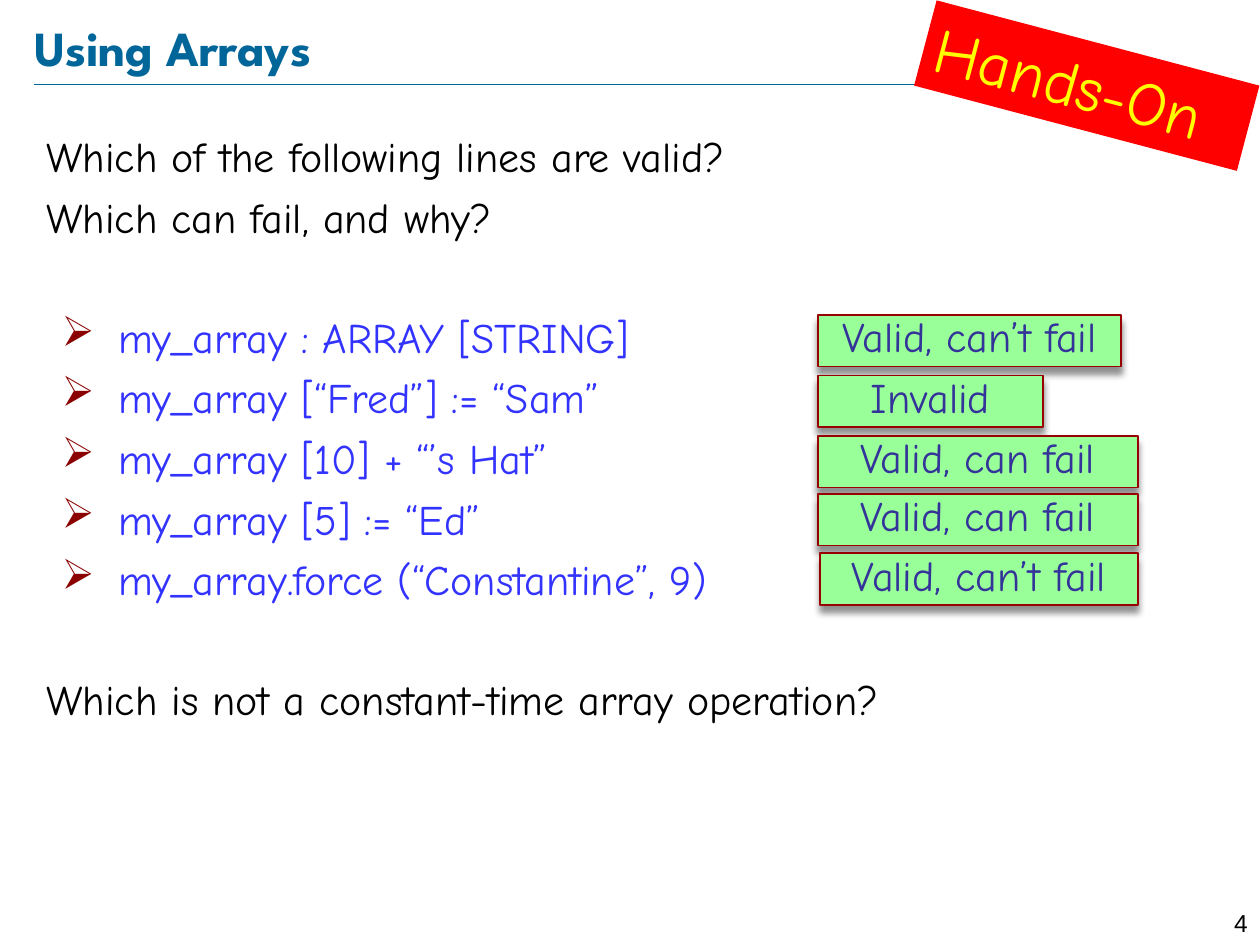
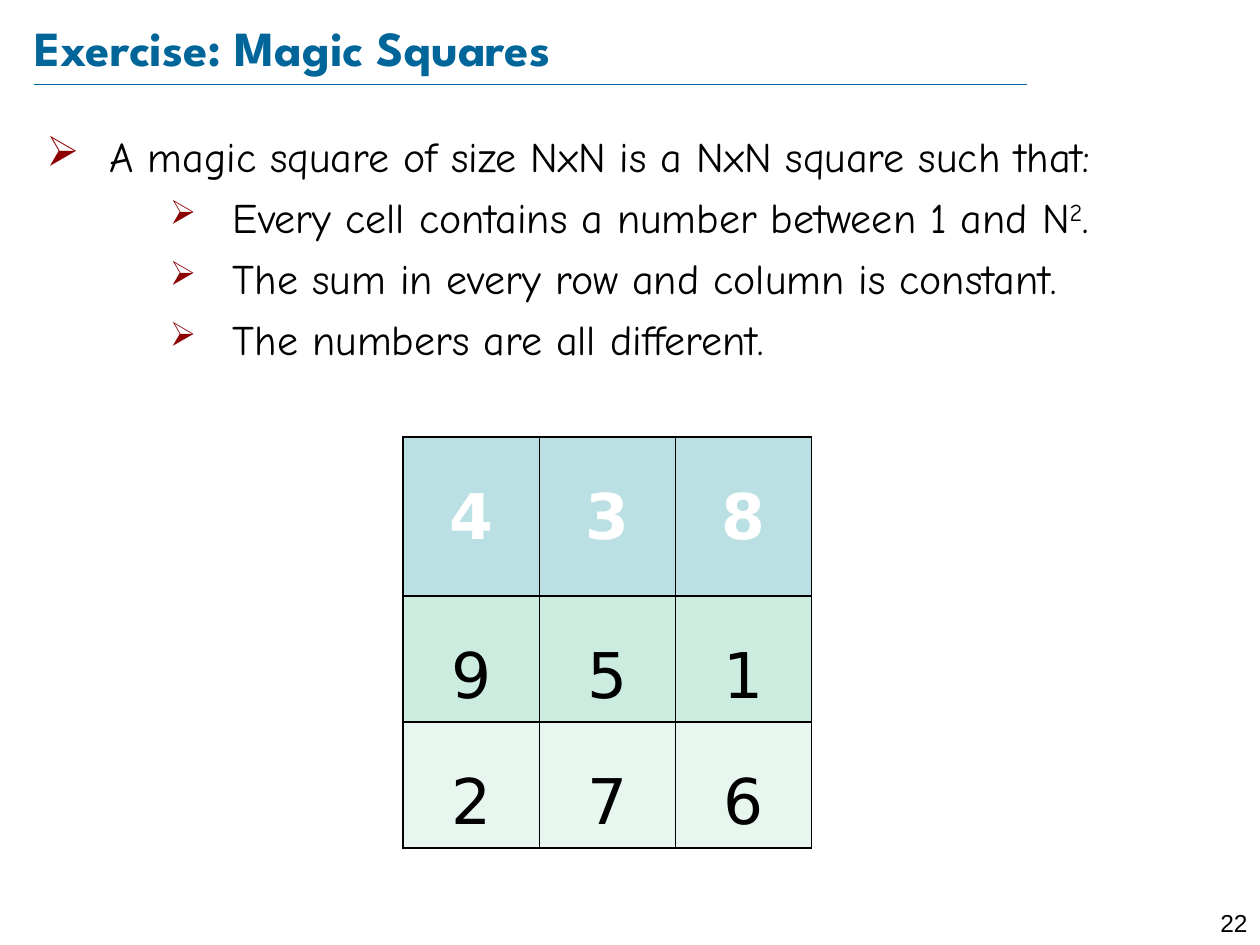
"""Builds two lecture slides on arrays: a validity quiz and the magic square exercise."""
from lxml import etree
from pptx import Presentation
from pptx.dml.color import RGBColor
from pptx.enum.shapes import MSO_CONNECTOR, MSO_SHAPE
from pptx.enum.text import MSO_ANCHOR, PP_ALIGN
from pptx.oxml.ns import qn
from pptx.util import Inches, Pt

STRAIGHT = MSO_CONNECTOR.STRAIGHT
RECTANGLE = MSO_SHAPE.RECTANGLE
MIDDLE, TOP = MSO_ANCHOR.MIDDLE, MSO_ANCHOR.TOP
LEFT, CENTER, RIGHT = PP_ALIGN.LEFT, PP_ALIGN.CENTER, PP_ALIGN.RIGHT

COLORS = {
    "title": "006699", "text": "000000", "code": "3333FF", "bullet": "8B0000",
    "sticker": "FF0000", "sticker_text": "FFFF00",
    "answer": "99FF99", "answer_line": "990000", "answer_text": "333399",
    "header_text": "FFFFFF", "header": "BBE0E3", "odd": "CBECDE", "even": "E7F6EF",
}
TITLE_FONT, BODY_FONT, NUMBER_FONT, GRID_FONT = (
    "League Spartan", "Comic Neue", "Arial", "DejaVu Sans")
LINE_GAP, SECTION_GAP = 5.9, 39.4

QUIZ_LINES = [
    "my_array : ARRAY [STRING]",
    "my_array [“Fred”] := “Sam”",
    "my_array [10] + “’s Hat”",
    "my_array [5] := “Ed”",
    "my_array.force (“Constantine”, 9)",
]
ANSWERS = [
    ("Valid, can’t fail", 6.49, 2.5, 2.41),
    ("Invalid", 6.49, 2.98, 1.79),
    ("Valid, can fail", 6.49, 3.46, 2.54),
    ("Valid, can fail", 6.49, 3.92, 2.54),
    ("Valid, can’t fail", 6.51, 4.39, 2.52),
]
MAGIC_RULES = [
    ["Every cell contains a number between 1 and N", "2", "."],
    ["The sum in every row and column is constant."],
    ["The numbers are all different."],
]
MAGIC_SQUARE = [[4, 3, 8], [9, 5, 1], [2, 7, 6]]


def color(name):
    """Return the named colour."""
    return RGBColor.from_string(COLORS[name])


def add_child(parent, tag, **attributes):
    """Append a DrawingML element and return it."""
    return etree.SubElement(parent, qn(f"a:{tag}"), attributes)


def add_solid(parent, name):
    """Append a solid fill in the named colour."""
    add_child(add_child(parent, "solidFill"), "srgbClr", val=COLORS[name])


def style_runs(para, font, size, color_name, bold=False):
    """Format every run of a paragraph."""
    for span in para.runs:
        span.font.name = font
        span.font.size = Pt(size)
        span.font.bold = bold
        span.font.color.rgb = color(color_name)


def set_margins(frame, left, top, right, bottom):
    """Set the four insets of a text frame or a table cell in inches."""
    frame.margin_left, frame.margin_top = Inches(left), Inches(top)
    frame.margin_right, frame.margin_bottom = Inches(right), Inches(bottom)


def add_text_box(page, left, top, width, height, margins=(0.1, 0.05, 0.1, 0.05), anchor=TOP):
    """Add a wrapping text box and return its text frame."""
    box = page.shapes.add_textbox(Inches(left), Inches(top), Inches(width), Inches(height))
    frame = box.text_frame
    frame.word_wrap = True
    frame.vertical_anchor = anchor
    set_margins(frame, *margins)
    return frame


def add_page(deck, title, number):
    """Add a blank page with title, rule and page number."""
    page = deck.slides.add_slide(deck.slide_layouts[6])
    rule = page.shapes.add_connector(
        STRAIGHT, Inches(0.27), Inches(0.67), Inches(8.15), Inches(0.67))
    rule.line.color.rgb = color("title")
    rule.line.width = Pt(0.25)
    add_child(rule._element.spPr, "effectLst")

    number_frame = add_text_box(page, 9.45, 7.16, 0.55, 0.24)
    number_frame.text = str(number)
    number_frame.paragraphs[0].alignment = RIGHT
    style_runs(number_frame.paragraphs[0], NUMBER_FONT, 14, "text")

    title_frame = add_text_box(page, 0.27, 0.13, 8.69, 0.48, (0, 0, 0, 0), MIDDLE)
    title_frame.text = title
    style_runs(title_frame.paragraphs[0], TITLE_FONT, 28, "title", True)
    return page


def add_body(page):
    """Add the main text area and return its text frame."""
    return add_text_box(page, 0.27, 0.96, 9.4, 6.17, (0.1, 0.08, 0.1, 0.05))


def add_bullet(para, indent, hanging, percent):
    """Give a paragraph an arrow bullet with a hanging indent."""
    properties = para._p.get_or_add_pPr()
    properties.set("marL", str(Inches(indent)))
    properties.set("indent", str(-Inches(hanging)))
    bullet_color = add_child(properties, "buClr")
    add_child(bullet_color, "srgbClr", val=COLORS["bullet"])
    add_child(properties, "buSzPct", val=str(percent * 1000))
    add_child(properties, "buChar", char="➢")


def add_line(frame, text, color_name="text", gap=LINE_GAP, bullet=None):
    """Add one body paragraph, with an optional (indent, hanging, percent) bullet."""
    is_first = not frame.text
    para = frame.paragraphs[0] if is_first else frame.add_paragraph()
    para.text = text
    if bullet:
        add_bullet(para, *bullet)
    if not is_first:
        para.space_before = Pt(gap)
    style_runs(para, BODY_FONT, 24, color_name)
    return para


def add_superscript(para, exponent, rest):
    """Append a raised exponent and the text after it."""
    for text in (exponent, rest):
        para.add_run().text = text
    style_runs(para, BODY_FONT, 24, "text")
    para.runs[1].font._element.set("baseline", "30000")


def add_label(page, text, place, fill, text_color, size, alignment):
    """Add a filled rectangle with one line of text."""
    box = page.shapes.add_shape(RECTANGLE, *(Inches(length) for length in place))
    box.shadow.inherit = False
    box.fill.solid()
    box.fill.fore_color.rgb = color(fill)
    box.line.fill.background()
    box.text_frame.text = text
    para = box.text_frame.paragraphs[0]
    para.alignment = alignment
    style_runs(para, BODY_FONT, size, text_color)
    return box


def add_sticker(page):
    """Add the tilted corner sticker."""
    box = add_label(page, "Hands-On", (7.3, 0.33, 2.65, 0.7),
                    "sticker", "sticker_text", 36, LEFT)
    box.rotation = 14.8
    box.text_frame.vertical_anchor = TOP


def add_answer(page, text, left, top, width):
    """Add an outlined answer box with a soft shadow below."""
    box = add_label(page, text, (left, top, width, 0.41),
                    "answer", "answer_text", 24, CENTER)
    box.line.color.rgb = color("answer_line")
    box.line.width = Pt(1)
    set_margins(box.text_frame, 0, 0.05, 0, 0.05)
    box.text_frame.vertical_anchor = MIDDLE
    box.text_frame.paragraphs[0].line_spacing = 0.8
    effects = box._element.spPr.find(qn("a:effectLst"))
    shadow = add_child(effects, "outerShdw", blurRad=str(Pt(4)), dist=str(Pt(4)),
                       dir="5400000", rotWithShape="0")
    shadow_color = add_child(shadow, "srgbClr", val=COLORS["text"])
    add_child(shadow_color, "alpha", val="43000")


def style_cell(cell, value, fill, text_color, bold):
    """Fill one grid cell with a centred number and black borders."""
    properties = cell._tc.get_or_add_tcPr()
    for side in ("lnL", "lnR", "lnT", "lnB"):
        add_solid(add_child(properties, side, w=str(Pt(1))), "text")
    cell.fill.solid()
    cell.fill.fore_color.rgb = color(fill)
    set_margins(cell, 0.1, 0.35, 0.1, 0.05)
    cell.text_frame.text = str(value)
    para = cell.text_frame.paragraphs[0]
    para.alignment = CENTER
    style_runs(para, GRID_FONT, 36, text_color, bold)


def add_magic_square(page):
    """Add the magic square as a table."""
    grid = page.shapes.add_table(
        3, 3, Inches(3.2), Inches(3.47), Inches(3.24), Inches(3.26)).table
    for column in grid.columns:
        column.width = Inches(1.08)
    fills = ("header", "odd", "even")
    for index, (row, numbers) in enumerate(zip(grid.rows, MAGIC_SQUARE)):
        is_header = index == 0
        row.height = Inches(1.26 if is_header else 1)
        for cell, value in zip(row.cells, numbers):
            style_cell(cell, value, fills[index],
                       "header_text" if is_header else "text", is_header)


def build_quiz(deck):
    """Build the slide on valid array operations."""
    page = add_page(deck, "Using Arrays", 4)
    body = add_body(page)
    add_line(body, "Which of the following lines are valid?")
    add_line(body, "Which can fail, and why?")
    for index, text in enumerate(QUIZ_LINES):
        add_line(body, text, "code", LINE_GAP if index else SECTION_GAP, (0.57, 0.45, 100))
    add_line(body, "Which is not a constant-time array operation?", gap=SECTION_GAP)
    add_sticker(page)
    for answer in ANSWERS:
        add_answer(page, *answer)


def build_exercise(deck):
    """Build the magic square slide."""
    page = add_page(deck, "Exercise: Magic Squares", 22)
    body = add_body(page)
    add_line(body, "A magic square of size NxN is a NxN square such that:",
             bullet=(0.5, 0.5, 100))
    for text, *raised in MAGIC_RULES:
        para = add_line(body, text, bullet=(1.48, 0.5, 80))
        para.level = 1
        if raised:
            add_superscript(para, *raised)
    add_magic_square(page)


def main():
    """Create and save the deck."""
    deck = Presentation()
    deck.slide_width, deck.slide_height = Inches(10), Inches(7.5)
    build_quiz(deck)
    build_exercise(deck)
    deck.save("out.pptx")


if __name__ == "__main__":
    main()
